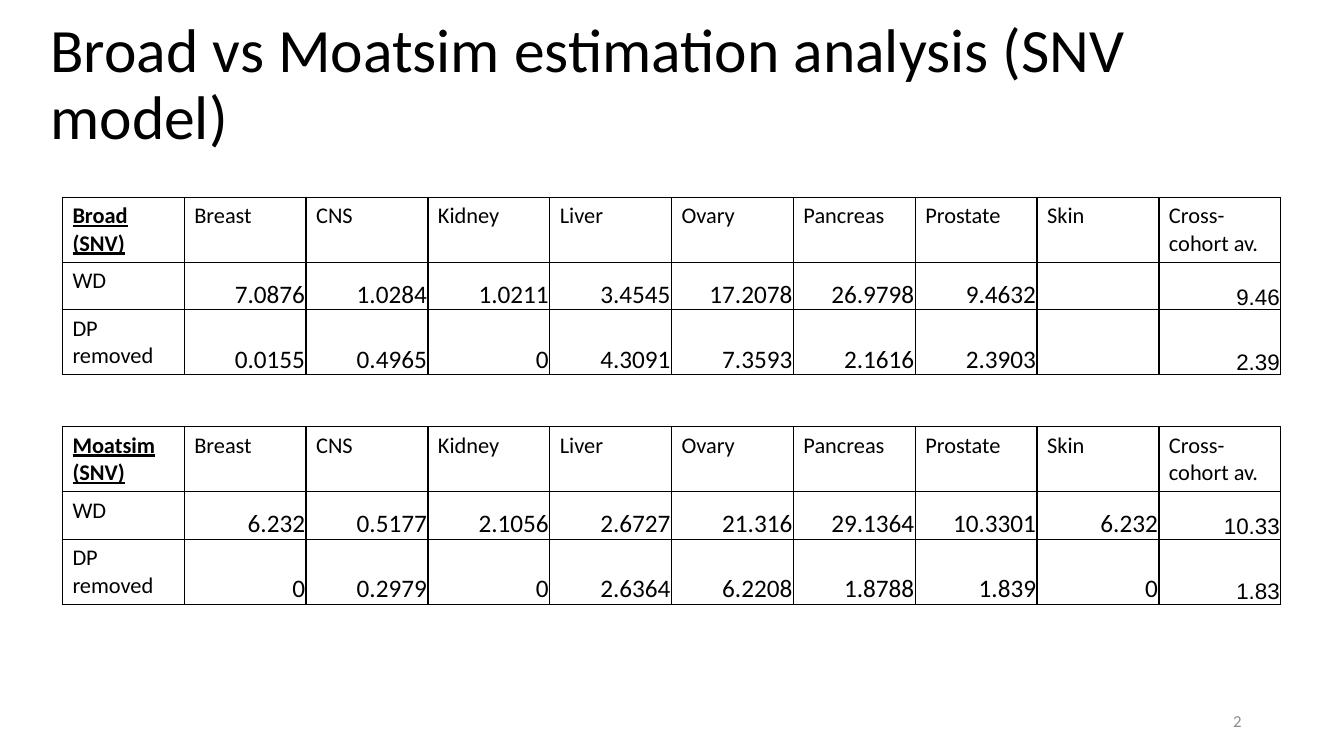
from lxml.etree import SubElement
from pptx import Presentation
from pptx.dml.color import RGBColor
from pptx.enum.text import MSO_ANCHOR, PP_ALIGN
from pptx.oxml.ns import qn
from pptx.util import Pt

BLACK = RGBColor(0x00, 0x00, 0x00)
GREY = RGBColor(0x8C, 0x8C, 0x8C)

COHORTS = ["Breast", "CNS", "Kidney", "Liver", "Ovary", "Pancreas",
           "Prostate", "Skin", "Cross-cohort av."]
BROAD = {
    "WD": ["7.0876", "1.0284", "1.0211", "3.4545", "17.2078",
           "26.9798", "9.4632", "", "9.46"],
    "DP removed": ["0.0155", "0.4965", "0", "4.3091", "7.3593",
                   "2.1616", "2.3903", "", "2.39"],
}
MOATSIM = {
    "WD": ["6.232", "0.5177", "2.1056", "2.6727", "21.316",
           "29.1364", "10.3301", "6.232", "10.33"],
    "DP removed": ["0", "0.2979", "0", "2.6364", "6.2208",
                   "1.8788", "1.839", "0", "1.83"],
}


class EstimationSlide:
    """Holds the slide and the style shared by its elements."""

    font_name = "Calibri"
    table_left, table_width = 44.6, 870.5
    row_heights = [46.4, 34, 46.4]

    def __init__(self, deck):
        self.slide = deck.slides.add_slide(deck.slide_layouts[5])

    def format(self, paragraph, size, color=BLACK, align=PP_ALIGN.LEFT, name=font_name):
        paragraph.alignment = align
        font = paragraph.font
        font.name, font.size, font.color.rgb = name, Pt(size), color
        return font

    def title(self, text, left, top, width, height):
        heading = self.slide.shapes.title
        heading.left, heading.top = Pt(left), Pt(top)
        heading.width, heading.height = Pt(width), Pt(height)
        frame = heading.text_frame
        frame.text = text
        frame.word_wrap = True
        frame.vertical_anchor = MSO_ANCHOR.MIDDLE
        frame.paragraphs[0].line_spacing = 0.9
        self.format(frame.paragraphs[0], 44)

    def page_number(self, number, left, top, width, height):
        box = self.slide.shapes.add_textbox(Pt(left), Pt(top), Pt(width), Pt(height))
        frame = box.text_frame
        frame.text = number
        frame.word_wrap = True
        frame.vertical_anchor = MSO_ANCHOR.MIDDLE
        self.format(frame.paragraphs[0], 12, GREY, PP_ALIGN.RIGHT)

    def borders(self, cell):
        properties = cell._tc.get_or_add_tcPr()
        for side in ("a:lnL", "a:lnR", "a:lnT", "a:lnB"):
            line = SubElement(properties, qn(side), w=str(Pt(1)))
            fill = SubElement(line, qn("a:solidFill"))
            SubElement(fill, qn("a:srgbClr"), val=str(BLACK))

    def label(self, cell, text):
        cell.text = text
        return self.format(cell.text_frame.paragraphs[0], 16)

    def value(self, cell, text, is_average):
        cell.text = text
        cell.vertical_anchor = MSO_ANCHOR.BOTTOM
        cell.margin_left = cell.margin_right = cell.margin_top = Pt(0.75)
        cell.margin_bottom = 0
        size, name = (16, "Arial") if is_average else (18, self.font_name)
        self.format(cell.text_frame.paragraphs[0], size, align=PP_ALIGN.RIGHT, name=name)

    def estimates(self, method, rows, top):
        frame = self.slide.shapes.add_table(
            len(rows) + 1, len(COHORTS) + 1, Pt(self.table_left), Pt(top),
            Pt(self.table_width), Pt(sum(self.row_heights)))
        table = frame.table
        table.first_row = table.horz_banding = False
        for row, height in zip(table.rows, self.row_heights):
            row.height = Pt(height)
        for cell in table.iter_cells():
            self.borders(cell)
            cell.fill.background()

        # Header row
        method_font = self.label(table.cell(0, 0), method)
        method_font.bold = method_font.underline = True
        for column, cohort in enumerate(COHORTS, 1):
            self.label(table.cell(0, column), cohort)

        # Estimates per cohort, with the average last
        for row, (treatment, values) in enumerate(rows.items(), 1):
            self.label(table.cell(row, 0), treatment)
            for column, value in enumerate(values, 1):
                self.value(table.cell(row, column), value, column == len(COHORTS))


def main():
    deck = Presentation()
    deck.slide_width, deck.slide_height = Pt(960), Pt(540)
    page = EstimationSlide(deck)

    # Heading
    page.title("Broad vs Moatsim estimation analysis (SNV model)", 28.8, 9.4, 908.6, 104.4)

    # One table per method
    page.estimates("Broad (SNV)", BROAD, 141)
    page.estimates("Moatsim (SNV)", MOATSIM, 304.8)

    # Footer
    page.page_number("2", 678, 500.4, 216, 28.8)

    deck.save("out.pptx")


if __name__ == "__main__":
    main()
